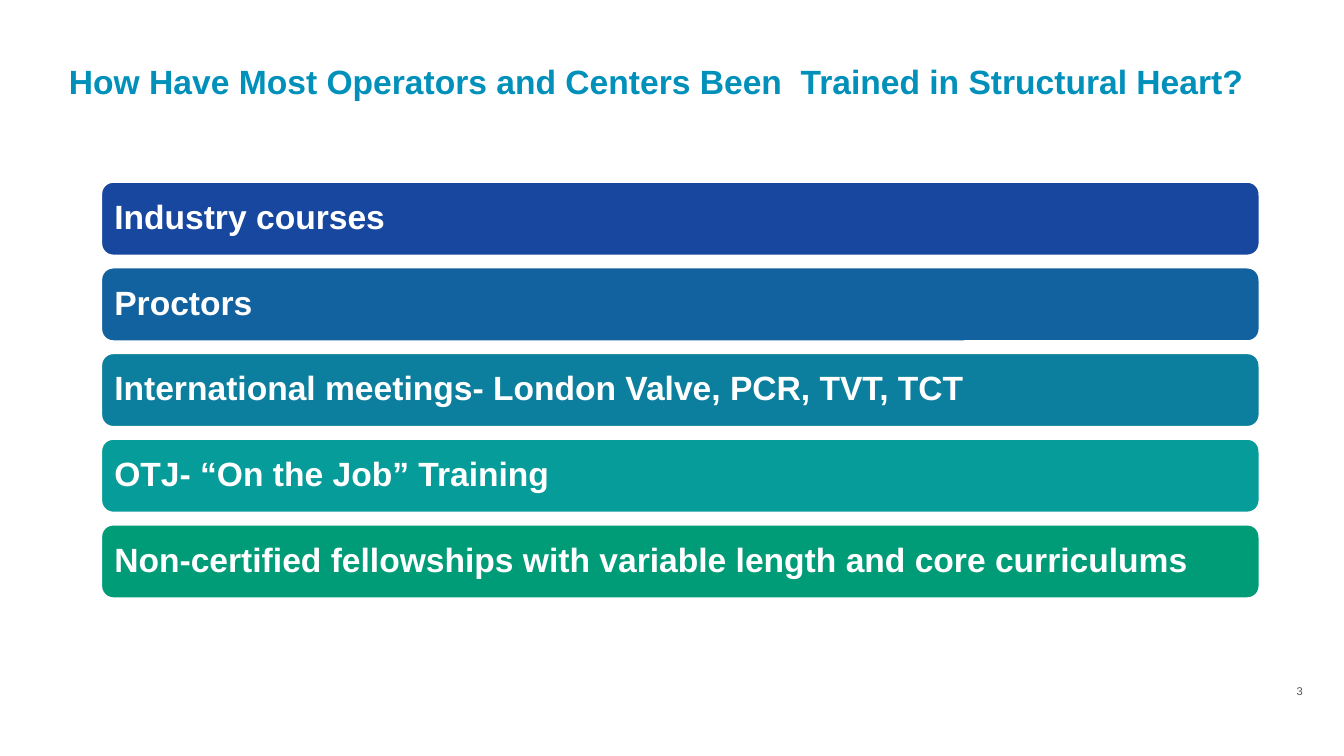
from pptx import Presentation
from pptx.dml.color import RGBColor
from pptx.enum.shapes import MSO_SHAPE
from pptx.enum.text import MSO_ANCHOR, PP_ALIGN
from pptx.util import Pt

ROUND_RECT = MSO_SHAPE.ROUNDED_RECTANGLE
TOP, MIDDLE = MSO_ANCHOR.TOP, MSO_ANCHOR.MIDDLE
LEFT, CENTER = PP_ALIGN.LEFT, PP_ALIGN.CENTER

FONT = "Arial"
WHITE = RGBColor(0xFF, 0xFF, 0xFF)
TITLE_BLUE = RGBColor(0x00, 0x90, 0xBA)
NUMBER_GRAY = RGBColor(0x55, 0x55, 0x55)

TITLE = "How Have Most Operators and Centers Been  Trained in Structural Heart?"
TRAINING_ROUTES = [
    ("Industry courses", RGBColor(0x17, 0x47, 0x9E)),
    ("Proctors", RGBColor(0x11, 0x62, 0x9E)),
    ("International meetings- London Valve, PCR, TVT, TCT",
     RGBColor(0x0B, 0x7F, 0x9D)),
    ("OTJ- “On the Job” Training", RGBColor(0x05, 0x9C, 0x9A)),
    ("Non-certified fellowships with variable length and core curriculums",
     RGBColor(0x00, 0x9B, 0x77)),
]

# Bar stack, in points
BAR_LEFT, BAR_TOP, BAR_WIDTH, BAR_HEIGHT = 72, 129.6, 828, 53.3
BAR_PITCH = 61.2


def set_text(shape, text, size, color, bold, align, anchor, inset):
    tf = shape.text_frame
    tf.word_wrap = True
    tf.vertical_anchor = anchor
    tf.margin_left = tf.margin_right = Pt(inset)
    tf.margin_top = tf.margin_bottom = Pt(inset)
    tf.text = text
    p = tf.paragraphs[0]
    p.alignment = align
    font = p.runs[0].font
    font.name, font.size, font.bold = FONT, Pt(size), bold
    font.color.rgb = color
    return p


def add_title(slide, text):
    s = slide.shapes.title
    s.left, s.top, s.width, s.height = Pt(37.4), Pt(36.7), Pt(862.6), Pt(48.2)
    set_text(s, text, 24, TITLE_BLUE, True, CENTER, TOP, 6.5)


def add_bar(slide, top, text, color):
    s = slide.shapes.add_shape(ROUND_RECT, Pt(BAR_LEFT), Pt(top),
                               Pt(BAR_WIDTH), Pt(BAR_HEIGHT))
    s.shadow.inherit = False
    s.fill.solid()
    s.fill.fore_color.rgb = color
    s.line.color.rgb = WHITE
    s.line.width = Pt(2)
    p = set_text(s, text, 24, WHITE, True, LEFT, MIDDLE, 7.2)
    p.line_spacing = 0.9


def add_slide_number(slide, text):
    s = slide.shapes.add_textbox(Pt(918.7), Pt(488.9), Pt(19.4), Pt(9.4))
    set_text(s, text, 8, NUMBER_GRAY, False, CENTER, MIDDLE, 0)


def main():
    prs = Presentation()
    prs.slide_width, prs.slide_height = Pt(960), Pt(540)
    slide = prs.slides.add_slide(prs.slide_layouts.get_by_name("Title Only"))

    # Title
    add_title(slide, TITLE)

    # Training routes
    for i, (text, color) in enumerate(TRAINING_ROUTES):
        add_bar(slide, BAR_TOP + i * BAR_PITCH, text, color)

    # Footer
    add_slide_number(slide, "3")

    prs.save("out.pptx")


if __name__ == "__main__":
    main()
